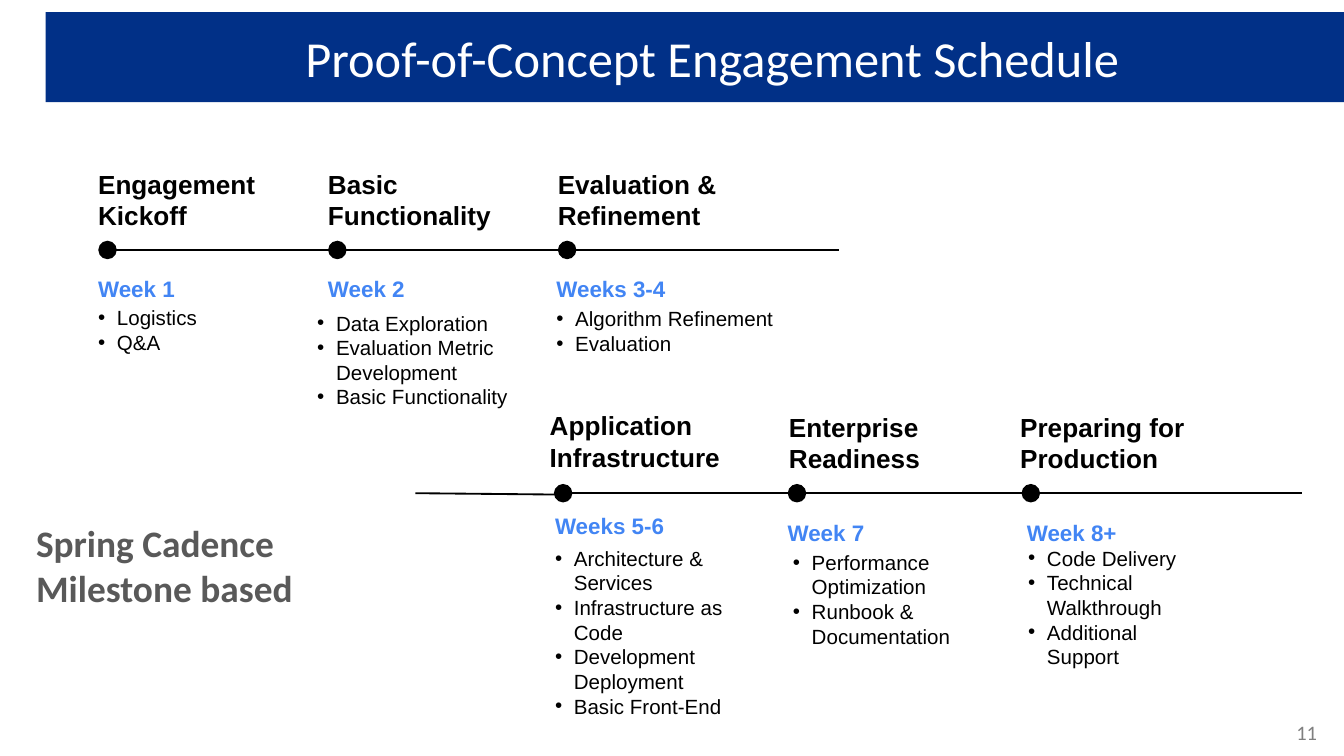
"""Builds the proof-of-concept engagement schedule slide with two milestone timelines."""
from dataclasses import dataclass

from lxml.etree import SubElement
from pptx import Presentation
from pptx.dml.color import RGBColor
from pptx.enum.shapes import MSO_CONNECTOR, MSO_SHAPE
from pptx.enum.text import MSO_ANCHOR, PP_ALIGN
from pptx.oxml.ns import qn
from pptx.util import Inches, Pt


@dataclass(frozen=True)
class TextStyle:
    size: int
    color: str
    font: str = "Arial"
    bold: bool = False


@dataclass(frozen=True)
class Theme:
    banner: str = "013087"
    line: str = "000000"
    title: TextStyle = TextStyle(27, "FFFFFF", "Calibri")
    heading: TextStyle = TextStyle(14, "000000", bold=True)
    week: TextStyle = TextStyle(12, "4285F4", bold=True)
    task: TextStyle = TextStyle(11, "000000")
    cadence: TextStyle = TextStyle(20, "595959", "Calibri", True)
    number: TextStyle = TextStyle(11, "7F7F7F", "Calibri")


@dataclass(frozen=True)
class Milestone:
    heading: list
    heading_box: tuple
    week: str
    week_box: tuple
    tasks: list
    tasks_box: tuple


class SlideBuilder:
    def __init__(self, slide, theme):
        self.slide = slide
        self.theme = theme

    def banner(self, left, top, width, height):
        shape = self.slide.shapes.add_shape(
            MSO_SHAPE.RECTANGLE, Inches(left), Inches(top), Inches(width), Inches(height))
        shape.shadow.inherit = False
        shape.fill.solid()
        shape.fill.fore_color.rgb = RGBColor.from_string(self.theme.banner)
        shape.line.fill.background()

    def text(self, box, lines, style, insets=(0.07, 0.04), align=PP_ALIGN.LEFT,
             anchor=MSO_ANCHOR.TOP, bullets=False):
        shape = self.slide.shapes.add_textbox(*map(Inches, box))
        frame = shape.text_frame
        frame.word_wrap = True
        frame.vertical_anchor = anchor
        frame.margin_left = frame.margin_right = Inches(insets[0])
        frame.margin_top = frame.margin_bottom = Inches(insets[1])
        for index, line in enumerate(lines):
            paragraph = frame.add_paragraph() if index else frame.paragraphs[0]
            if bullets:
                self.bullet(paragraph, style)
            paragraph.alignment = align
            for part_index, part in enumerate(line.split("\n")):
                if part_index:
                    paragraph.add_line_break()
                self.run(paragraph, part, style)

    def run(self, paragraph, text, style):
        run = paragraph.add_run()
        run.text = text
        run.font.name = style.font
        run.font.size = Pt(style.size)
        run.font.bold = style.bold
        run.font.color.rgb = RGBColor.from_string(style.color)

    def bullet(self, paragraph, style):
        properties = paragraph._p.get_or_add_pPr()
        properties.set("marL", str(Inches(0.14)))
        properties.set("indent", str(Inches(-0.16)))
        color = SubElement(properties, qn("a:buClr"))
        SubElement(color, qn("a:srgbClr"), val=style.color)
        SubElement(properties, qn("a:buFont"), typeface=style.font)
        SubElement(properties, qn("a:buChar"), char="•")

    def line(self, start, end, dot=True):
        connector = self.slide.shapes.add_connector(
            MSO_CONNECTOR.STRAIGHT, *map(Inches, (*start, *end)))
        connector.line.width = Pt(1)
        connector.line.color.rgb = RGBColor.from_string(self.theme.line)
        properties = connector._element.spPr
        if dot:
            SubElement(properties.find(qn("a:ln")), qn("a:headEnd"),
                       type="oval", w="lg", len="lg")
        SubElement(properties, qn("a:effectLst"))

    def timeline(self, first, pitch, top, count):
        for index in range(count):
            left = first + index * pitch
            length = 2.02 if index == count - 1 else 1.7
            self.line((left, top), (left + length, top))

    def milestone(self, item):
        self.text(item.heading_box, item.heading, self.theme.heading)
        self.text(item.week_box, [item.week], self.theme.week)
        self.text(item.tasks_box, item.tasks, self.theme.task, bullets=True)


MILESTONES = [
    Milestone(["Engagement\nKickoff"], (0.66, 1.21, 1.51, 0.53),
              "Week 1", (0.66, 2.01, 1.29, 0.25),
              ["Logistics", "Q&A"], (0.66, 2.23, 1.74, 0.47)),
    Milestone(["Basic", "Functionality"], (2.37, 1.21, 1.36, 0.53),
              "Week 2", (2.37, 2.01, 1.29, 0.25),
              ["Data Exploration", "Evaluation Metric Development", "Basic Functionality"],
              (2.29, 2.27, 1.74, 0.61)),
    Milestone(["Evaluation &", "Refinement"], (4.08, 1.21, 1.51, 0.53),
              "Weeks 3-4", (4.07, 2.01, 1.29, 0.25),
              ["Algorithm Refinement", "Evaluation"], (4.07, 2.24, 2.17, 0.34)),
    Milestone(["Application Infrastructure"], (4.02, 3.01, 1.48, 0.53),
              "Weeks 5-6", (4.06, 3.77, 1.29, 0.25),
              ["Architecture & Services", "Infrastructure as Code",
               "Development Deployment", "Basic Front-End"], (4.06, 4.02, 1.74, 0.61)),
    Milestone(["Enterprise\nReadiness"], (5.8, 3.02, 1.38, 0.53),
              "Week 7", (5.79, 3.82, 1.29, 0.25),
              ["Performance Optimization", "Runbook & Documentation"],
              (5.83, 4.05, 1.74, 0.34)),
    Milestone(["Preparing for Production"], (7.52, 3.02, 1.58, 0.53),
              "Week 8+", (7.57, 3.82, 1.58, 0.23),
              ["Code Delivery", "Technical Walkthrough", "Additional Support"],
              (7.58, 4.02, 1.51, 0.47)),
]


def main():
    presentation = Presentation()
    presentation.slide_width = Inches(10)
    presentation.slide_height = Inches(10 * 9 / 16)
    slide = presentation.slides.add_slide(presentation.slide_layouts[6])
    theme = Theme()
    builder = SlideBuilder(slide, theme)

    builder.banner(0.34, 0.09, 9.66, 0.67)
    builder.text((0.94, 0.11, 8.72, 0.63), ["Proof-of-Concept Engagement Schedule"],
                 theme.title, (0.1, 0.1), PP_ALIGN.CENTER, MSO_ANCHOR.MIDDLE)
    builder.text((8.98, 5.32, 0.89, 0.2), ["11"], theme.number, align=PP_ALIGN.RIGHT)

    builder.timeline(0.8, 1.71, 1.86, 3)
    builder.line((4.15, 3.68), (3.09, 3.67), dot=False)
    builder.timeline(4.19, 1.74, 3.67, 3)
    for item in MILESTONES:
        builder.milestone(item)

    builder.text((0.17, 3.77, 2.27, 1.65), ["Spring Cadence", "Milestone based"],
                 theme.cadence, (0.1, 0.1))
    presentation.save("out.pptx")


if __name__ == "__main__":
    main()
